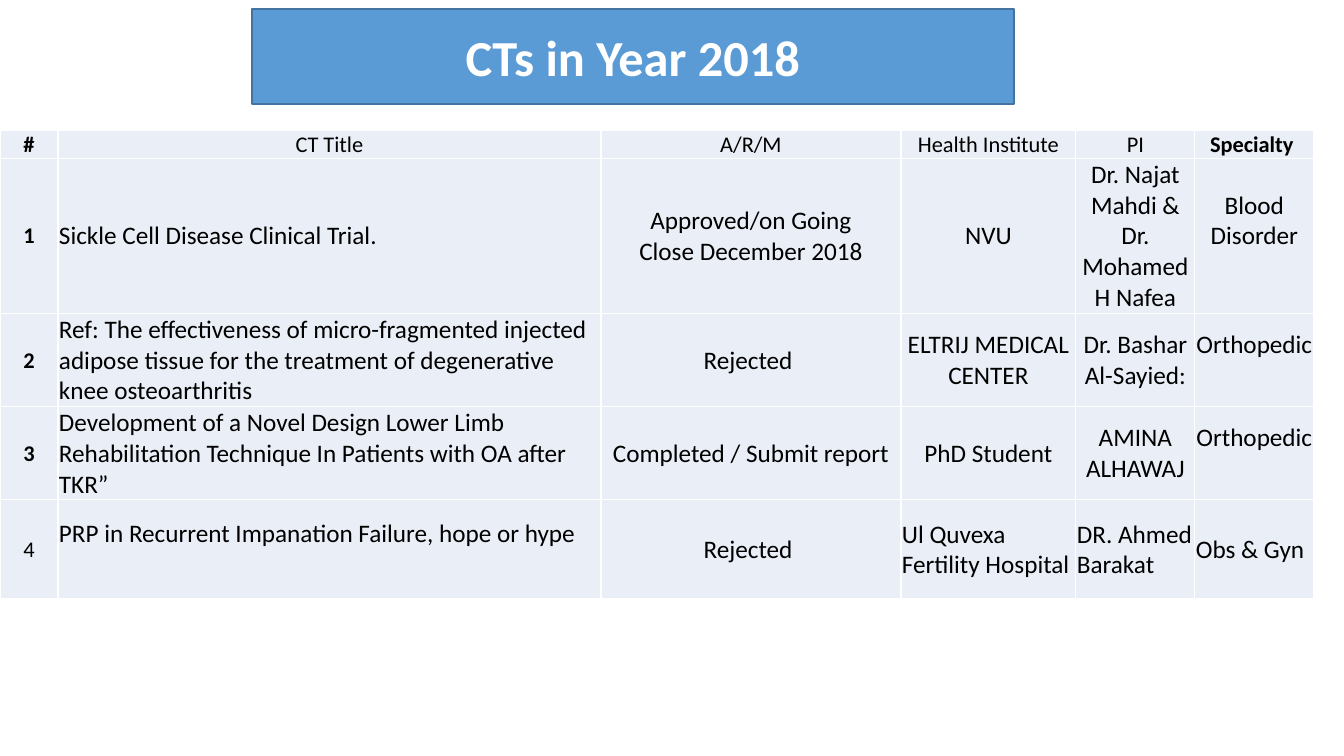
from dataclasses import dataclass

from lxml.etree import SubElement
from pptx import Presentation
from pptx.dml.color import RGBColor
from pptx.enum.shapes import MSO_SHAPE as Preset
from pptx.enum.text import MSO_ANCHOR as Anchor, PP_ALIGN as Align
from pptx.oxml.ns import qn
from pptx.util import Pt

# Content
TITLE = "CTs in Year 2018"
HEADERS = ["#", "CT Title", "A/R/M", "Health Institute", "PI", "Specialty "]
TRIALS = [
    ["1", "Sickle Cell Disease Clinical Trial.",
     "Approved/on Going\nClose December 2018", "NVU",
     "Dr. Najat Mahdi & Dr. Mohamed H Nafea", "Blood Disorder"],
    ["2", "Ref: The effectiveness of micro-fragmented injected adipose tissue "
          "for the treatment of degenerative knee osteoarthritis",
     "Rejected ", "ELTRIJ MEDICAL CENTER", "Dr. Bashar Al-Sayied:", "Orthopedic"],
    ["3", "Development of a Novel Design Lower Limb Rehabilitation Technique "
          "In Patients with OA after TKR”",
     "Completed / Submit report", "PhD Student", "AMINA ALHAWAJ", "Orthopedic"],
    ["4", "PRP in Recurrent Impanation Failure, hope or hype",
     "Rejected ", "Ul Quvexa Fertility Hospital", "DR. Ahmed Barakat", "Obs & Gyn"],
]
BOLD = {(0, 0), (0, 5), (1, 0), (2, 0), (3, 0)}
LEFT = {(row, 1) for row in range(1, 5)} | {(4, 3), (4, 4), (4, 5)}
RAISED = {(1, 5), (2, 5), (3, 5), (4, 1)}  # sit half a line above the middle

# Layout in px
SLIDE_SIZE = (1344, 756)
BANNER = (252, 9, 762, 95)
TABLE_LEFT, TABLE_TOP = 0, 130
COLUMNS = [58, 543, 300, 175, 119, 119]
ROWS = [27, 153, 92, 91, 99]
INSET, LINE_HEIGHT = 1, 31


@dataclass(frozen=True)
class Theme:
    font: str = "Calibri"
    title_size: int = 36
    label_size: int = 16
    body_size: int = 18
    banner: str = "5B9BD5"
    banner_line: str = "43739E"
    cell: str = "EAEFF7"
    white: str = "FFFFFF"
    black: str = "000000"


THEME = Theme()


def px(length):
    return round(length * 914400 / 100.8)


def paint(fill, color):
    fill.solid()
    fill.fore_color.rgb = RGBColor.from_string(color)


def write(frame, text, *, size, color=THEME.black, bold=False, align=Align.CENTER):
    frame.word_wrap = True
    for index, line in enumerate(text.split("\n")):
        paragraph = frame.add_paragraph() if index else frame.paragraphs[0]
        paragraph.alignment = align
        run = paragraph.add_run()
        run.text = line
        run.font.name = THEME.font
        run.font.size = Pt(size)
        run.font.bold = bold
        run.font.color.rgb = RGBColor.from_string(color)


def add_borders(cell):
    properties = cell._tc.get_or_add_tcPr()
    for index, side in enumerate(("a:lnL", "a:lnR", "a:lnT", "a:lnB")):
        line = SubElement(properties, qn(side), w=str(Pt(1)))
        fill = SubElement(line, qn("a:solidFill"))
        SubElement(fill, qn("a:srgbClr"), val=THEME.white)
        properties.insert(index, line)


def add_trials_table(slide):
    cells = [HEADERS] + TRIALS
    table = slide.shapes.add_table(
        len(ROWS), len(COLUMNS), px(TABLE_LEFT), px(TABLE_TOP),
        px(sum(COLUMNS)), px(sum(ROWS))).table
    table.first_row = table.horz_banding = False
    for column, width in zip(table.columns, COLUMNS):
        column.width = px(width)
    for row, height in zip(table.rows, ROWS):
        row.height = px(height)

    for row, texts in enumerate(cells):
        for column, text in enumerate(texts):
            place = (row, column)
            cell = table.cell(row, column)
            cell.margin_left = cell.margin_right = cell.margin_top = px(INSET)
            cell.margin_bottom = px(LINE_HEIGHT if place in RAISED else 0)
            cell.vertical_anchor = Anchor.MIDDLE if row else Anchor.BOTTOM
            paint(cell.fill, THEME.cell)
            add_borders(cell)
            is_label = row == 0 or column == 0
            write(cell.text_frame, text,
                  size=THEME.label_size if is_label else THEME.body_size,
                  bold=place in BOLD,
                  align=Align.LEFT if place in LEFT else Align.CENTER)


def add_banner(slide):
    banner = slide.shapes.add_shape(Preset.RECTANGLE, *map(px, BANNER))
    banner.shadow.inherit = False
    paint(banner.fill, THEME.banner)
    paint(banner.line.fill, THEME.banner_line)
    banner.line.width = Pt(1)
    banner.text_frame.vertical_anchor = Anchor.MIDDLE
    write(banner.text_frame, TITLE, size=THEME.title_size,
          color=THEME.white, bold=True)


def main():
    presentation = Presentation()
    presentation.slide_width, presentation.slide_height = map(px, SLIDE_SIZE)
    slide = presentation.slides.add_slide(presentation.slide_layouts[6])
    paint(slide.background.fill, THEME.white)
    add_trials_table(slide)
    add_banner(slide)
    presentation.save("out.pptx")


if __name__ == "__main__":
    main()
